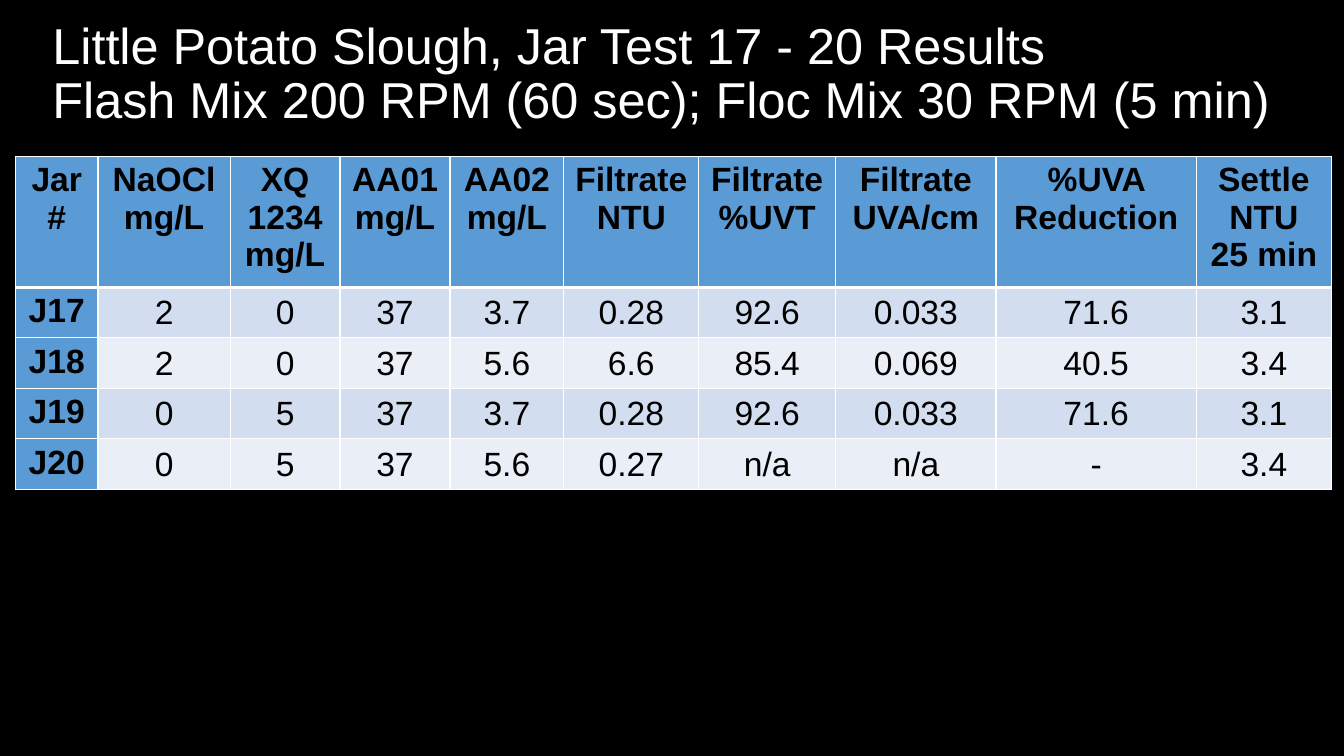
from lxml import etree
from pptx import Presentation
from pptx.dml.color import RGBColor
from pptx.enum import text
from pptx.oxml import ns
from pptx.util import Cm, Pt

BLACK = RGBColor(0x00, 0x00, 0x00)
WHITE = RGBColor(0xFF, 0xFF, 0xFF)
BLUE = RGBColor(0x5B, 0x9B, 0xD5)
BANDS = [RGBColor(0xD2, 0xDE, 0xEF), RGBColor(0xEA, 0xEF, 0xF7)]

TITLE = ("Little Potato Slough, Jar Test 17 - 20 Results\v"
         "Flash Mix 200 RPM (60 sec); Floc Mix 30 RPM (5 min)")
COLUMNS = [
    ("Jar\v#", 2.08), ("NaOCl\nmg/L", 3.33), ("XQ 1234\nmg/L", 2.77),
    ("AA01\nmg/L", 2.77), ("AA02\nmg/L", 2.87), ("Filtrate\nNTU", 3.4),
    ("Filtrate\n%UVT", 3.45), ("Filtrate\nUVA/cm", 4.04),
    ("%UVA Reduction", 5.05), ("Settle\nNTU\n25 min", 3.4),
]
RESULTS = [
    ("J17", "2", "0", "37", "3.7", "0.28", "92.6", "0.033", "71.6", "3.1"),
    ("J18", "2", "0", "37", "5.6", "6.6", "85.4", "0.069", "40.5", "3.4"),
    ("J19", "0", "5", "37", "3.7", "0.28", "92.6", "0.033", "71.6", "3.1"),
    ("J20", "0", "5", "37", "5.6", "0.27", "n/a", "n/a", "-", "3.4"),
]
ROW_HEIGHT = Cm(1.04)
TABLE_HEIGHT = Cm(8.38)
VALUE_FORMAT = {
    "vertical_anchor": text.MSO_ANCHOR.MIDDLE,
    "margin_left": Cm(0.03), "margin_right": Cm(0.03),
    "margin_top": Cm(0.03), "margin_bottom": 0,
}


def apply(target, values):
    for name, value in values.items():
        setattr(target, name, value)


def write(frame, words, color, paragraph_format, font_format):
    frame.text = words
    for para in frame.paragraphs:
        apply(para, paragraph_format)
        for span in para.runs:
            apply(span.font, {"name": "Arial", **font_format})
            span.font.color.rgb = color


def add_title(page):
    box = page.shapes.add_textbox(Cm(1.07), Cm(0.28), Cm(32.49), Cm(3.23))
    apply(box.text_frame, {"word_wrap": True,
                           "vertical_anchor": text.MSO_ANCHOR.MIDDLE})
    write(box.text_frame, TITLE, WHITE, {"line_spacing": 0.9}, {"size": Pt(36)})


def add_borders(cell, widths):
    properties = cell._tc.get_or_add_tcPr()
    for side, width in widths.items():
        line = etree.SubElement(properties, ns.qn(f"a:ln{side}"), w=str(Pt(width)))
        fill = etree.SubElement(line, ns.qn("a:solidFill"))
        etree.SubElement(fill, ns.qn("a:srgbClr"), val=str(WHITE))


def fill_cell(cell, words, row, column):
    is_heading = row == 0 or column == 0
    if not is_heading:
        apply(cell, VALUE_FORMAT)
    add_borders(cell, {"L": 1, "R": 1, "T": 3 if row == 1 else 1,
                       "B": 3 if row == 0 else 1})
    cell.fill.solid()
    cell.fill.fore_color.rgb = BLUE if is_heading else BANDS[(row - 1) % 2]
    write(cell.text_frame, words, BLACK, {"alignment": text.PP_ALIGN.CENTER},
          {"size": Pt(24), "bold": is_heading})


def add_results(page):
    headings, widths = zip(*COLUMNS)
    rows = [headings, *RESULTS]
    holder = page.shapes.add_table(
        len(rows), len(headings), Cm(0.39), Cm(3.94), Cm(sum(widths)),
        TABLE_HEIGHT)
    table = holder.table
    for column, width in zip(table.columns, widths):
        column.width = Cm(width)
    for row, values in enumerate(rows):
        table.rows[row].height = ROW_HEIGHT
        for column, words in enumerate(values):
            fill_cell(table.cell(row, column), words, row, column)
    holder.height = TABLE_HEIGHT


def main():
    deck = Presentation()
    apply(deck, {"slide_width": Cm(33.87), "slide_height": Cm(19.05)})
    page = deck.slides.add_slide(deck.slide_layouts[6])
    page.background.fill.solid()
    page.background.fill.fore_color.rgb = BLACK
    add_title(page)
    add_results(page)
    deck.save("out.pptx")


if __name__ == "__main__":
    main()
